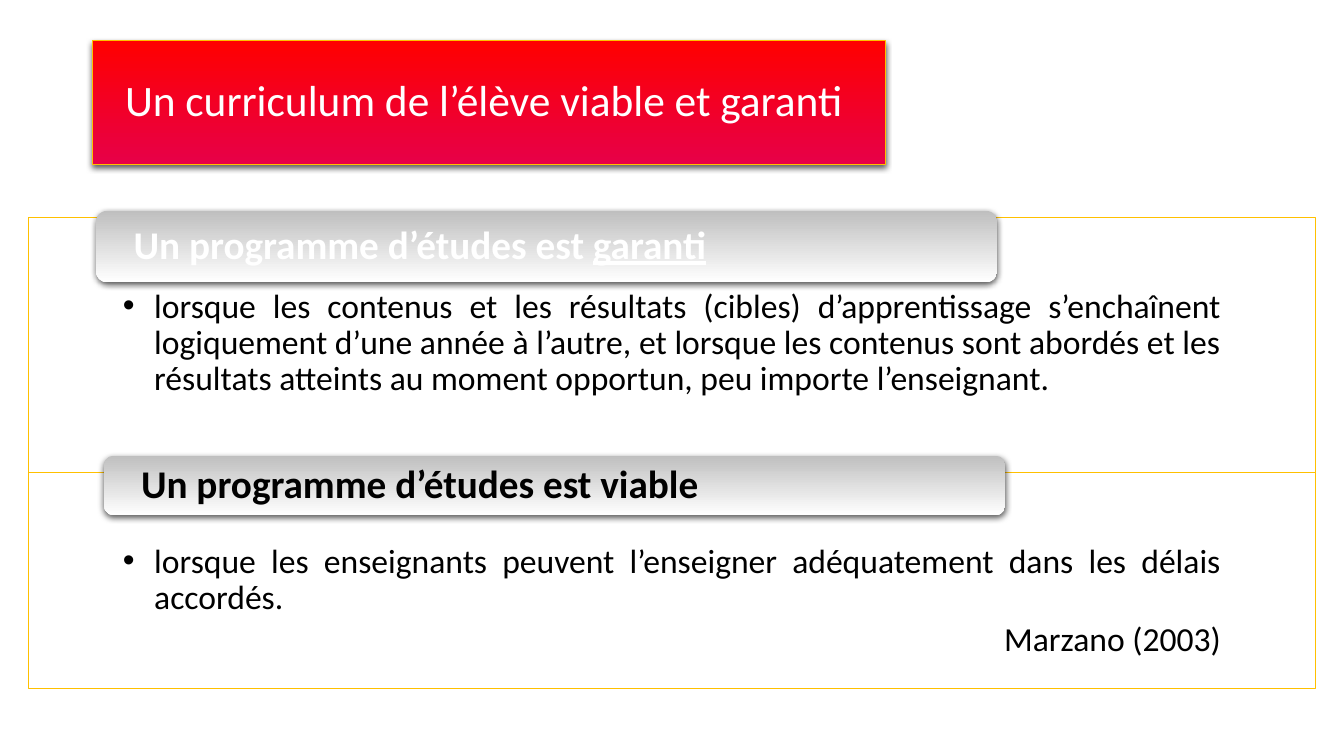
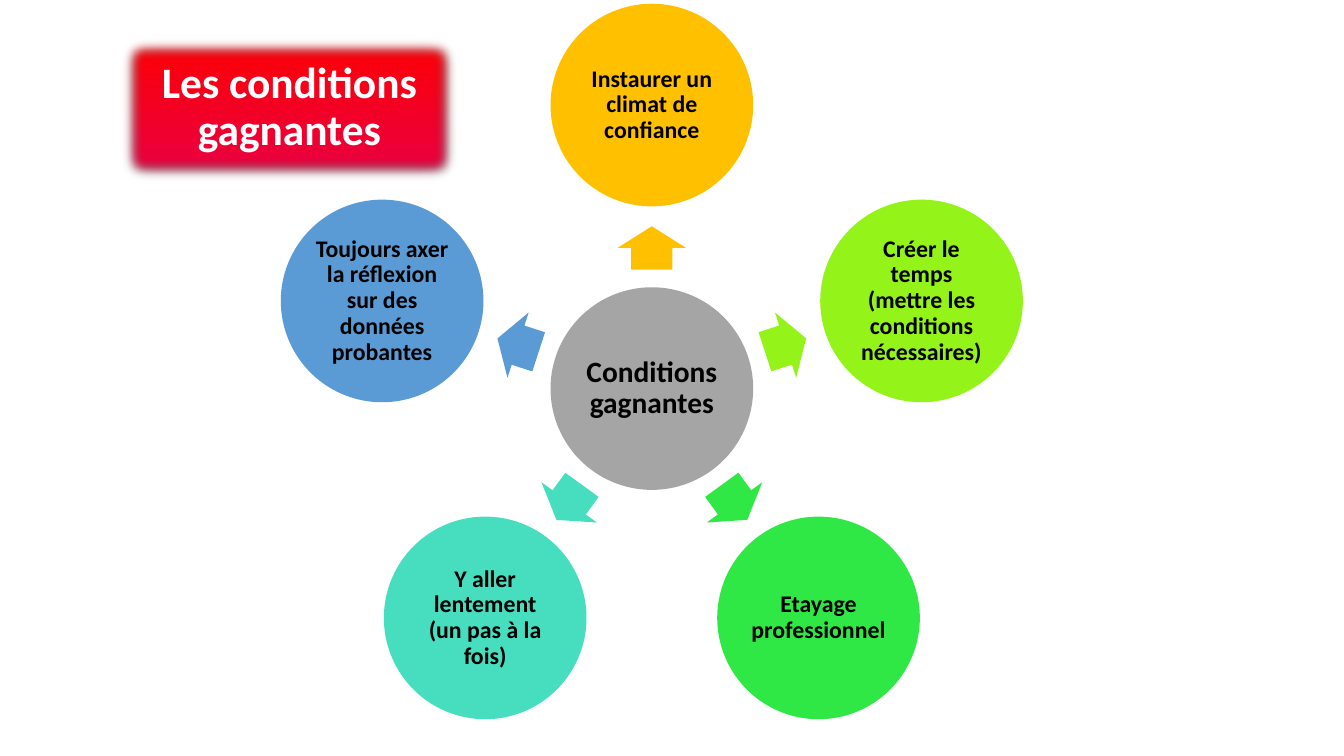
from math import cos, radians, sin

from lxml import etree
from pptx import Presentation
from pptx.dml.color import RGBColor
from pptx.enum.shapes import MSO_SHAPE
from pptx.enum.text import MSO_ANCHOR, PP_ALIGN
from pptx.oxml.ns import qn
from pptx.util import Inches, Pt

RECTANGLE, ROUNDED = MSO_SHAPE.RECTANGLE, MSO_SHAPE.ROUNDED_RECTANGLE
OVAL, ARROW = MSO_SHAPE.OVAL, MSO_SHAPE.RIGHT_ARROW
LEFT, CENTER, RIGHT, JUSTIFY = PP_ALIGN.LEFT, PP_ALIGN.CENTER, PP_ALIGN.RIGHT, PP_ALIGN.JUSTIFY
TOP, MIDDLE = MSO_ANCHOR.TOP, MSO_ANCHOR.MIDDLE

FONT = "Calibri"
WHITE = RGBColor(0xFF, 0xFF, 0xFF)
BLACK = RGBColor(0x00, 0x00, 0x00)
RED = RGBColor(0xFF, 0x00, 0x00)
CRIMSON = RGBColor(0xE7, 0x00, 0x48)
GOLD = RGBColor(0xFF, 0xC0, 0x00)
SILVER = RGBColor(0xBF, 0xBF, 0xBF)
GREY = RGBColor(0xA5, 0xA5, 0xA5)
LIME = RGBColor(0x94, 0xF3, 0x19)
GREEN = RGBColor(0x30, 0xE8, 0x45)
TURQUOISE = RGBColor(0x46, 0xDE, 0xBF)
BLUE = RGBColor(0x5B, 0x9B, 0xD5)

presentation = Presentation()
presentation.slide_width = Inches(13.33)
presentation.slide_height = Inches(7.5)
BLANK = presentation.slide_layouts[6]

# The grid has 100 columns and 100 rows.
COLUMN = presentation.slide_width / 100
ROW = presentation.slide_height / 100


def add_box(slide, kind, place, colors, line=None, line_width=0.5, shadow=False, soft_edge=0):
    """Add a shape; place is left, top, width, height in EMU, two colors make a gradient."""
    shape = slide.shapes.add_shape(kind, *[round(length) for length in place])
    if len(colors) == 1:
        shape.fill.solid()
        shape.fill.fore_color.rgb = colors[0]
    else:
        shape.fill.gradient()
        shape.fill.gradient_angle = 270
        for stop, color in zip(shape.fill.gradient_stops, colors):
            stop.color.rgb = color
    if line is None:
        shape.line.fill.background()
    else:
        shape.line.color.rgb = line
        shape.line.width = Pt(line_width)
    shape.shadow.inherit = False
    effects = shape._element.spPr.find(qn("a:effectLst"))
    if shadow:
        outer = etree.SubElement(effects, qn("a:outerShdw"), blurRad=str(Pt(4.5)),
                                 dist=str(Pt(1.5)), dir="5400000", rotWithShape="0")
        color = etree.SubElement(outer, qn("a:srgbClr"), val=str(BLACK))
        etree.SubElement(color, qn("a:alpha"), val="63000")
    if soft_edge:
        etree.SubElement(effects, qn("a:softEdge"), rad=str(Pt(soft_edge)))
    return shape


def write(shape, paragraphs, size, color=BLACK, bold=False, anchor=MIDDLE, insets=(0, 0, 0, 0)):
    """Fill a shape with (alignment, bullet, runs) paragraphs; a run is (text, underlined)."""
    frame = shape.text_frame
    frame.word_wrap = True
    frame.vertical_anchor = anchor
    frame.margin_left, frame.margin_top, frame.margin_right, frame.margin_bottom = [
        Inches(inset) for inset in insets]
    for index, (alignment, bullet, runs) in enumerate(paragraphs):
        paragraph = frame.add_paragraph() if index else frame.paragraphs[0]
        paragraph.alignment = alignment
        paragraph.line_spacing = 0.9
        if index:
            paragraph.space_before = Pt(4)
        if bullet:
            properties = paragraph._p.get_or_add_pPr()
            properties.set("marL", str(Inches(0.31)))
            properties.set("indent", str(-Inches(0.31)))
            etree.SubElement(properties, qn("a:buFont"), typeface="Arial")
            etree.SubElement(properties, qn("a:buChar"), char=bullet)
        for text, underlined in runs:
            run = paragraph.add_run()
            run.text = text
            run.font.name = FONT
            run.font.size = Pt(size)
            run.font.bold = bold
            run.font.color.rgb = color
            if underlined:
                run.font.underline = True


TITLE_FILL = (RED, CRIMSON)
TITLE_TEXT = dict(size=31, color=WHITE, insets=(0.32, 0, 0.32, 0))

# Slide 1: two definitions
slide = presentation.slides.add_slide(BLANK)
title = add_box(slide, RECTANGLE, (6.9 * COLUMN, 5.33 * ROW, 58.96 * COLUMN, 16.4 * ROW),
                TITLE_FILL, line=GOLD, line_width=0.75, shadow=True)
write(title, [(LEFT, None, [("Un curriculum de l’élève viable et garanti", False)])], **TITLE_TEXT)

# Panel top and height, heading left, top and height, heading color, heading, body
definitions = [
    (28.8, 34.27, 7.13, 27.87, 9.47, WHITE,
     [("Un programme d’études est ", False), ("garanti", True)],
     [(JUSTIFY, "•", [("lorsque les contenus et les résultats (cibles) d’apprentissage "
                       "s’enchaînent logiquement d’une année à l’autre, et lorsque les "
                       "contenus sont abordés et les résultats atteints au moment opportun, "
                       "peu importe l’enseignant.", False)])]),
    (62.53, 28.53, 7.73, 60.27, 7.87, BLACK,
     [("Un programme d’études est viable", False)],
     [(JUSTIFY, "•", [("lorsque les enseignants peuvent l’enseigner adéquatement dans les "
                       "délais accordés.", False)]),
      (RIGHT, None, [("Marzano (2003)", False)])]),
]
for (panel_top, panel_height, heading_left, heading_top, heading_height,
     heading_color, heading_runs, body) in definitions:
    panel = add_box(slide, RECTANGLE,
                    (2.1 * COLUMN, panel_top * ROW, 95.8 * COLUMN, panel_height * ROW),
                    (WHITE,), line=GOLD)
    write(panel, body, size=24, anchor=TOP, insets=(0.94, 0.71, 0.94, 0.24))
    heading = add_box(slide, ROUNDED,
                      (heading_left * COLUMN, heading_top * ROW,
                       67.07 * COLUMN, heading_height * ROW),
                      (SILVER, WHITE), shadow=True)
    write(heading, [(LEFT, None, heading_runs)], size=28, color=heading_color, bold=True,
          insets=(0.34, 0, 0.34, 0))

# Slide 2: five conditions around a hub
slide = presentation.slides.add_slide(BLANK)
HUB_X, HUB_Y = 48.5 * COLUMN, 51.4 * ROW
DIAMETER = 26.8 * ROW
CONDITION_DISTANCE = 37.5 * ROW
ARROW_DISTANCE = 18.6 * ROW
ARROW_LENGTH, ARROW_BREADTH = 5.73 * ROW, 9.07 * ROW

hub = add_box(slide, OVAL, (HUB_X - DIAMETER / 2, HUB_Y - DIAMETER / 2, DIAMETER, DIAMETER),
              (GREY,))
write(hub, [(CENTER, None, [("Conditions gagnantes", False)])], size=21, bold=True,
      insets=(0.03,) * 4)

conditions = [
    ("Instaurer un climat de confiance", GOLD),
    ("Créer le temps (mettre les conditions nécessaires)", LIME),
    ("Etayage professionnel", GREEN),
    ("Y aller lentement (un pas à la fois)", TURQUOISE),
    ("Toujours axer la réflexion sur des données probantes", BLUE),
]
for index, (text, color) in enumerate(conditions):
    angle = -90 + index * 360 / len(conditions)
    across, down = cos(radians(angle)), sin(radians(angle))
    arrow = add_box(slide, ARROW,
                    (HUB_X + ARROW_DISTANCE * across - ARROW_LENGTH / 2,
                     HUB_Y + ARROW_DISTANCE * down - ARROW_BREADTH / 2,
                     ARROW_LENGTH, ARROW_BREADTH), (color,))
    arrow.adjustments[0] = 0.6
    arrow.adjustments[1] = 0.5
    arrow.rotation = angle % 360
    condition = add_box(slide, OVAL,
                        (HUB_X + CONDITION_DISTANCE * across - DIAMETER / 2,
                         HUB_Y + CONDITION_DISTANCE * down - DIAMETER / 2,
                         DIAMETER, DIAMETER), (color,))
    write(condition, [(CENTER, None, [(text, False)])], size=17, bold=True, insets=(0.02,) * 4)

title = add_box(slide, RECTANGLE, (8.7 * COLUMN, 4.27 * ROW, 25.66 * COLUMN, 20.13 * ROW),
                TITLE_FILL, shadow=True, soft_edge=10)
write(title, [(CENTER, None, [("Les conditions gagnantes", False)])], bold=True, **TITLE_TEXT)

presentation.save("out.pptx")
